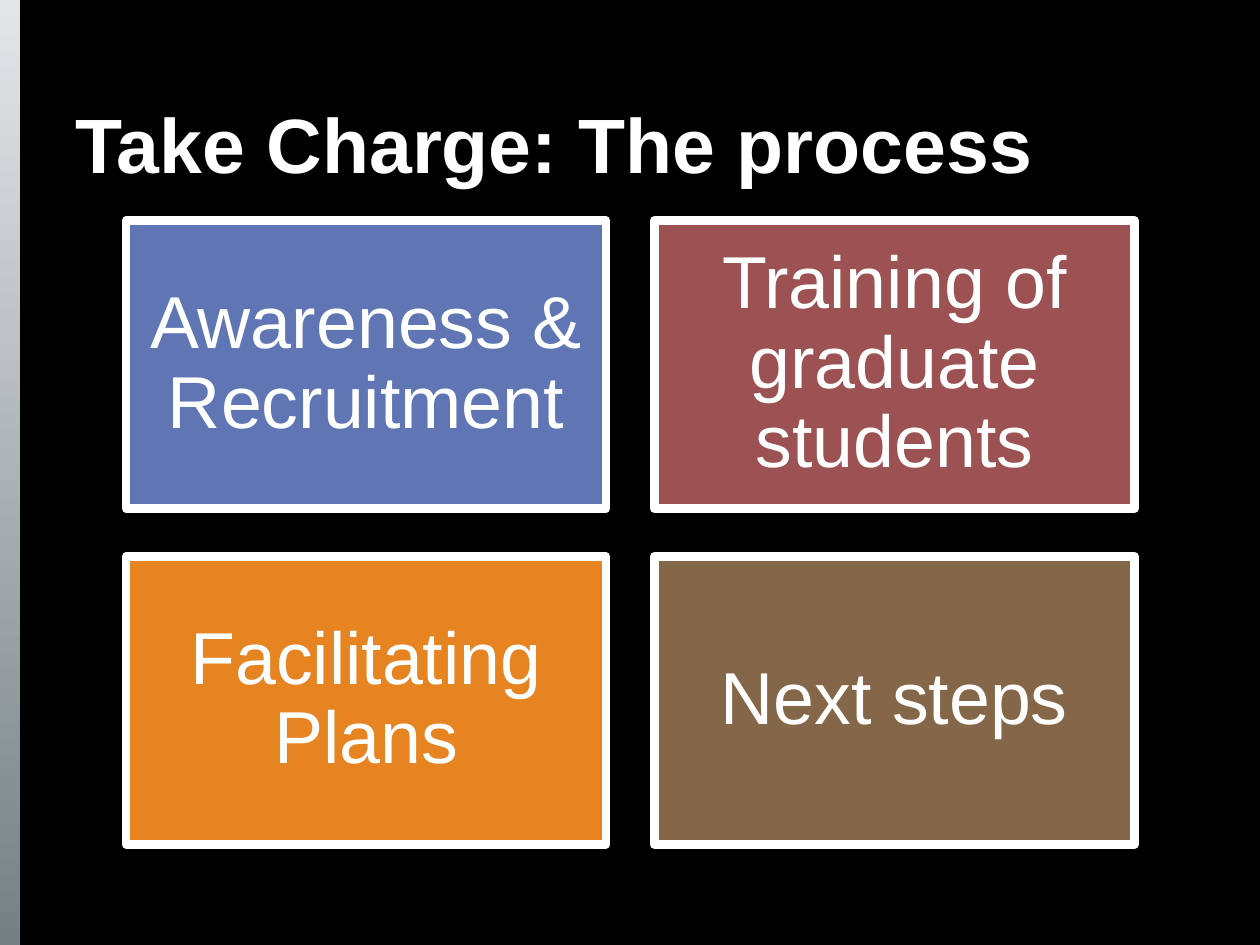
import pptx
import pptx.dml.color
import pptx.enum.shapes
import pptx.enum.text
import pptx.util
from dataclasses import dataclass

Cm = pptx.util.Cm
Pt = pptx.util.Pt
rgb = pptx.dml.color.RGBColor.from_string


@dataclass(frozen=True)
class Theme:
    font: str = "Arial"
    background: str = "000000"
    text: str = "FFFFFF"
    bar_bottom: str = "758085"
    bar_top: str = "E3E6E7"
    steps: tuple = ("6076B4", "9C5252", "E68422", "846648")
    title_size: int = 44
    step_size: int = 42
    border: int = 5


theme = Theme()


def add_text(paragraph, text, size, bold=False):
    run = paragraph.add_run()
    run.text = text
    run.font.name = theme.font
    run.font.size = Pt(size)
    run.font.bold = bold
    run.font.color.rgb = rgb(theme.text)


# Slide and background
presentation = pptx.Presentation()
presentation.slide_width = Cm(25.4)
presentation.slide_height = Cm(19.05)
slide = presentation.slides.add_slide(presentation.slide_layouts[5])
slide.background.fill.solid()
slide.background.fill.fore_color.rgb = rgb(theme.background)
rectangle = pptx.enum.shapes.MSO_SHAPE.RECTANGLE

# Gradient bar on the left edge
bar = slide.shapes.add_shape(rectangle, 0, 0, Cm(0.41), presentation.slide_height)
bar.shadow.inherit = False
bar.line.fill.background()
bar.fill.gradient()
bar.fill.gradient_angle = 90
for stop, color, position in zip(bar.fill.gradient_stops,
                                 (theme.bar_bottom, theme.bar_top), (0, 1)):
    stop.color.rgb = rgb(color)
    stop.position = position

# Title
title = slide.shapes.title
title.left, title.top = Cm(1.27), Cm(0.76)
title.width, title.height = Cm(22.86), Cm(3.18)
title.text_frame.vertical_anchor = pptx.enum.text.MSO_ANCHOR.BOTTOM
paragraph = title.text_frame.paragraphs[0]
paragraph.alignment = pptx.enum.text.PP_ALIGN.LEFT
add_text(paragraph, "Take Charge: The process", theme.title_size, bold=True)

# Process steps in a two-by-two grid
steps = ("Awareness & Recruitment", "Training of graduate students",
         "Facilitating Plans", "Next steps")
left, top, width, height, gap = 2.54, 4.45, 9.68, 5.8, 0.97
for index, (step, color) in enumerate(zip(steps, theme.steps)):
    row, column = divmod(index, 2)
    box = slide.shapes.add_shape(
        rectangle, Cm(left + column * (width + gap)),
        Cm(top + row * (height + gap)), Cm(width), Cm(height))
    box.shadow.inherit = False
    box.fill.solid()
    box.fill.fore_color.rgb = rgb(color)
    box.line.color.rgb = rgb(theme.text)
    box.line.width = Pt(theme.border)
    frame = box.text_frame
    frame.word_wrap = True
    frame.vertical_anchor = pptx.enum.text.MSO_ANCHOR.MIDDLE
    frame.margin_left = frame.margin_right = Cm(0.43)
    frame.margin_top = frame.margin_bottom = Cm(0.43)
    paragraph = frame.paragraphs[0]
    paragraph.alignment = pptx.enum.text.PP_ALIGN.CENTER
    paragraph.line_spacing = 0.9
    add_text(paragraph, step, theme.step_size)

presentation.save("out.pptx")
